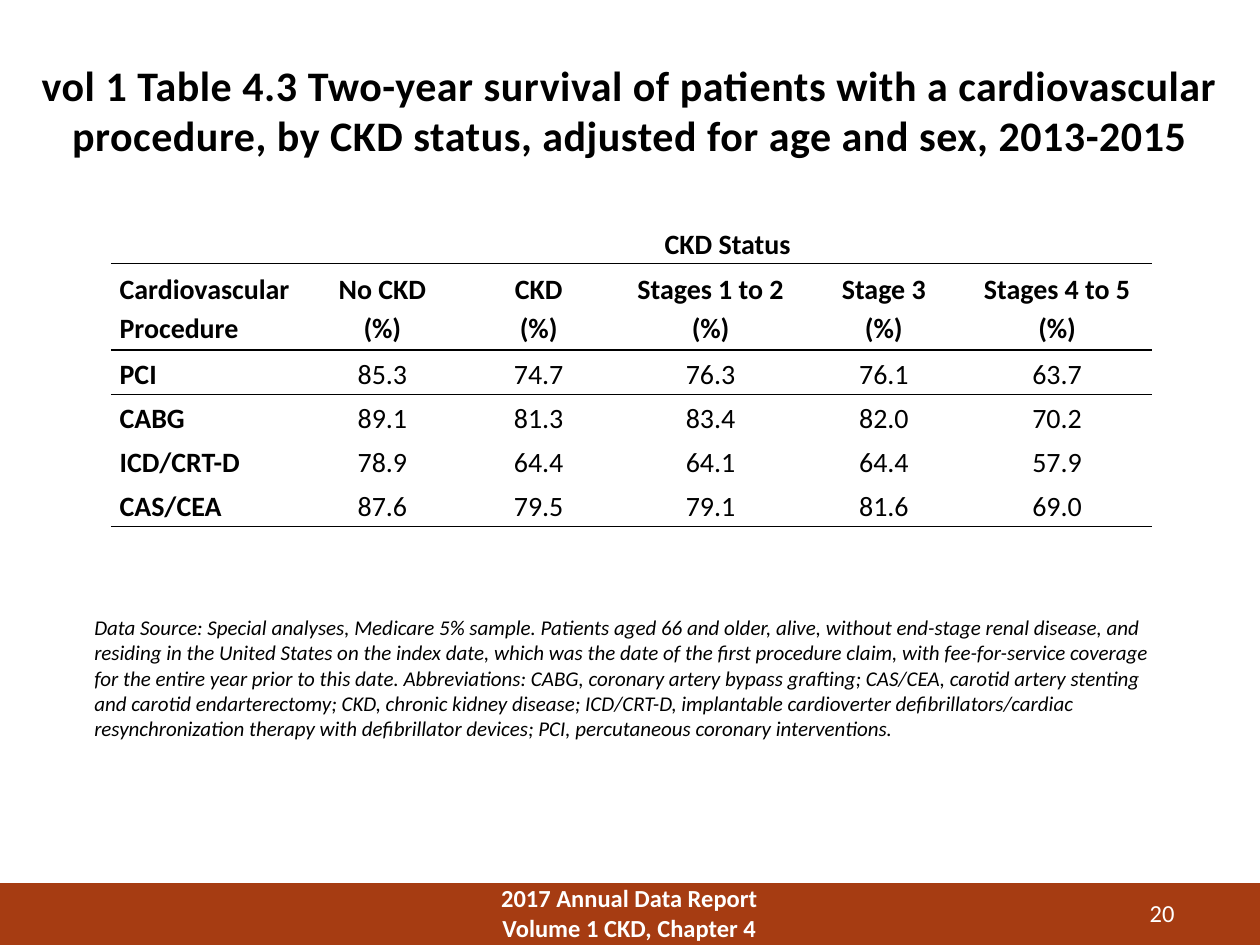
from dataclasses import dataclass

from pptx import Presentation
from pptx import util as u
from pptx.dml.color import RGBColor
from pptx.enum import shapes, text
from pptx.oxml import parse_xml
from pptx.oxml.ns import nsdecls

FONT = "Calibri"
BLACK, WHITE, RUST = "000000", "FFFFFF", "A63C12"
LEFT, CENTER, RIGHT = text.PP_ALIGN.LEFT, text.PP_ALIGN.CENTER, text.PP_ALIGN.RIGHT
NO_STYLE = "{2D5ABB26-0587-4C30-8999-92F81FD0307C}"

COLUMNS = [1.53, 1.25, 1.23, 1.5, 1.25, 1.5]
ROWS = [0.34, 0.69, 0.35, 0.35, 0.35, 0.35]
BORDERS = {0: ["lnB"], 1: ["lnT", "lnB"], 2: ["lnT"], 5: ["lnB"]}
GROUPS = ["No CKD", "CKD", "Stages 1 to 2", "Stage 3", "Stages 4 to 5"]
SURVIVAL = {
    "PCI": ["85.3", "74.7", "76.3", "76.1", "63.7"],
    "CABG": ["89.1", "81.3", "83.4", "82.0", "70.2"],
    "ICD/CRT-D": ["78.9", "64.4", "64.1", "64.4", "57.9"],
    "CAS/CEA": ["87.6", "79.5", "79.1", "81.6", "69.0"],
}
TITLE = (
    "vol 1 Table 4.3 Two-year survival of patients with a cardiovascular "
    "procedure, by CKD status, adjusted for age and sex, 2013-2015"
)
SOURCE = (
    "Data Source: Special analyses, Medicare 5% sample. Patients aged 66 and older, "
    "alive, without end-stage renal disease, and residing in the United States on the "
    "index date, which was the date of the first procedure claim, with fee-for-service "
    "coverage for the entire year prior to this date. Abbreviations: CABG, coronary "
    "artery bypass grafting; CAS/CEA, carotid artery stenting and carotid "
    "endarterectomy; CKD, chronic kidney disease; ICD/CRT-D, implantable cardioverter "
    "defibrillators/cardiac resynchronization therapy with defibrillator devices; PCI, "
    "percutaneous coronary interventions."
)


@dataclass
class Label:
    text: str
    left: float
    top: float
    width: float
    height: float
    size: int
    color: str = BLACK
    align: text.PP_ALIGN = LEFT
    bold: bool = False
    italic: bool = False
    spacing: int = 0


LABELS = [
    Label("2017 Annual Data Report\nVolume 1 CKD, Chapter 4", 3.58, 6.96, 2.83, 0.54,
          14, WHITE, CENTER, bold=True),
    Label("20", 8.42, 7.08, 1, 0.3, 14, WHITE, RIGHT),
    Label(TITLE, 0.23, 0.42, 9.54, 1.25, 24, BLACK, CENTER, bold=True, spacing=30),
    Label(SOURCE, 0.65, 4.83, 8.71, 1.11, 12, italic=True),
]


def rgb(color: str) -> RGBColor:
    return RGBColor.from_string(color)


def format_text(tf, size: int, color: str, align, bold: bool, italic: bool = False) -> None:
    for p in tf.paragraphs:
        p.alignment = align
        for r in p.runs:
            f = r.font
            f.name, f.size, f.bold, f.italic = FONT, u.Pt(size), bold, italic
            f.color.rgb = rgb(color)


def add_label(s, label: Label) -> None:
    box = [u.Inches(v) for v in (label.left, label.top, label.width, label.height)]
    tf = s.shapes.add_textbox(*box).text_frame
    tf.word_wrap = True
    tf.text = label.text
    format_text(tf, label.size, label.color, label.align, label.bold, label.italic)
    if label.spacing:
        for r in tf.paragraphs[0].runs:
            r.font._element.set("spc", str(label.spacing))


def add_border(cell, side: str) -> None:
    cell._tc.get_or_add_tcPr().append(parse_xml(
        f'<a:{side} {nsdecls("a")} w="{u.Pt(1)}"><a:solidFill>'
        f'<a:srgbClr val="{BLACK}"/></a:solidFill></a:{side}>'))


def add_cell(cell, value: str, row: int, col: int) -> None:
    cell.margin_left = cell.margin_right = u.Inches(0.07)
    cell.margin_top = cell.margin_bottom = 0
    cell.vertical_anchor = text.MSO_ANCHOR.MIDDLE
    for side in BORDERS.get(row, []):
        add_border(cell, side)
    cell.fill.background()
    if value:
        p = cell.text_frame.paragraphs[0]
        p.text = value
        p.line_spacing = 1.15
        format_text(cell.text_frame, 16, BLACK, CENTER if col else LEFT, row < 2 or col == 0)


def add_survival_table(s) -> None:
    frame = s.shapes.add_table(len(ROWS), len(COLUMNS), u.Inches(0.88), u.Inches(1.75),
                               u.Inches(sum(COLUMNS)), u.Inches(sum(ROWS)))
    table = frame.table
    table.first_row = table.horz_banding = False
    table._tbl.tblPr.find("{*}tableStyleId").text = NO_STYLE
    for column, width in zip(table.columns, COLUMNS):
        column.width = u.Inches(width)
    for row, height in zip(table.rows, ROWS):
        row.height = u.Inches(height)
    values = [
        ["", "CKD Status", "", "", "", ""],
        ["Cardiovascular Procedure"] + [f"{group}\v(%)" for group in GROUPS],
    ] + [[name] + rates for name, rates in SURVIVAL.items()]
    for i, line in enumerate(values):
        for j, value in enumerate(line):
            add_cell(table.cell(i, j), value, i, j)
    table.cell(0, 1).merge(table.cell(0, 5))


def add_footer_band(s) -> None:
    sp = s.shapes.add_shape(shapes.MSO_SHAPE.RECTANGLE, 0, u.Inches(7.01),
                            u.Inches(10), u.Inches(0.49))
    sp.shadow.inherit = False
    sp.fill.solid()
    sp.fill.fore_color.rgb = rgb(RUST)
    sp.line.fill.background()


def main() -> None:
    """Build the slide on two-year survival by CKD status."""
    prs = Presentation()
    prs.slide_width, prs.slide_height = u.Inches(10), u.Inches(7.5)
    s = prs.slides.add_slide(prs.slide_layouts[6])
    add_footer_band(s)
    add_survival_table(s)
    for label in LABELS:
        add_label(s, label)
    prs.save("out.pptx")


if __name__ == "__main__":
    main()
